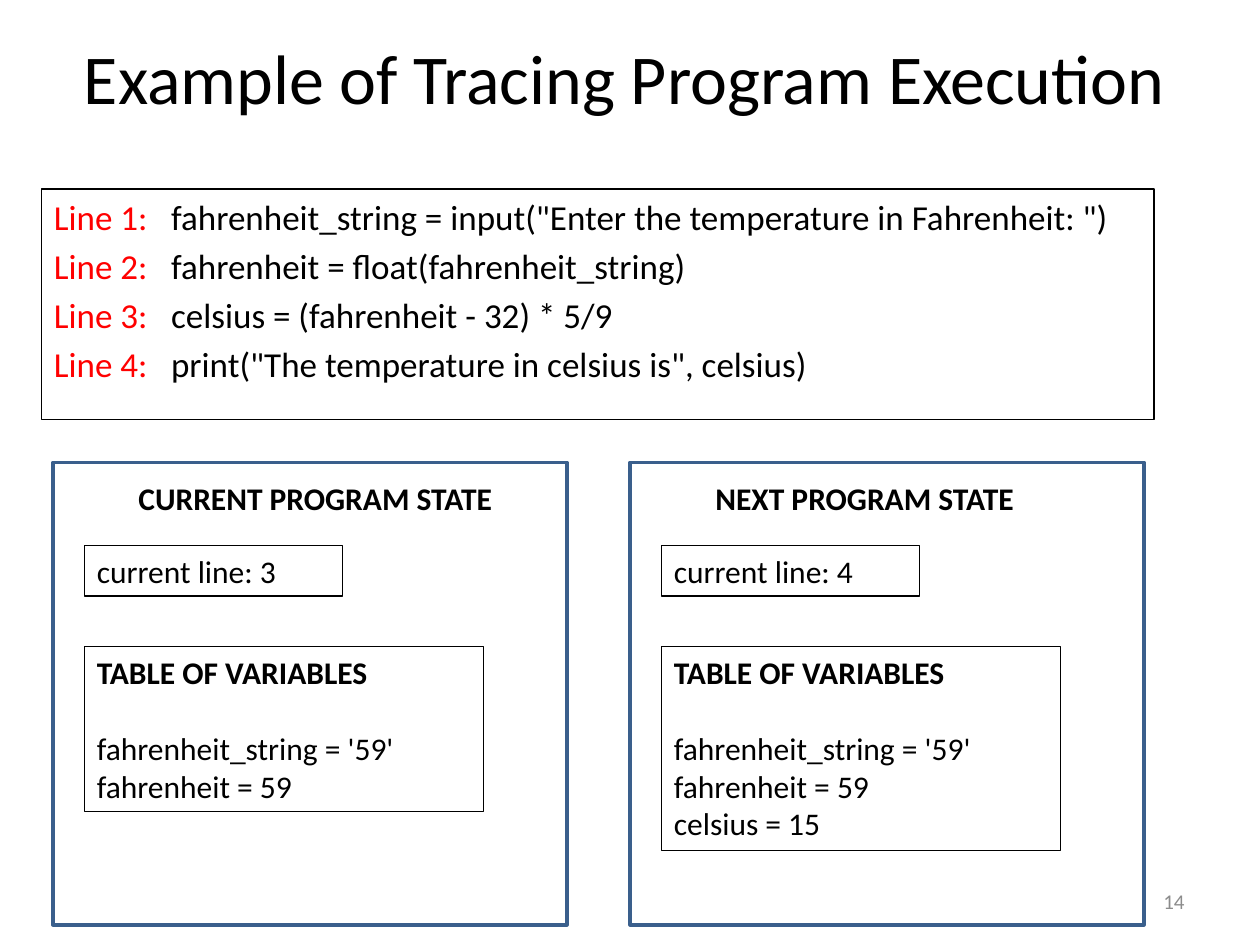
from pptx import Presentation
from pptx.dml.color import RGBColor
from pptx.enum.shapes import MSO_SHAPE as Shape
from pptx.enum.text import MSO_ANCHOR as Anchor, PP_ALIGN as Align
from pptx.util import Inches, Pt


def color(value):
    return RGBColor.from_string(value)


def add_box(shapes, place, lines=(), size=18, ink="000000", border=None, weight=0.75):
    left, top, width, height = map(Inches, place)
    if border:
        box = shapes.add_shape(Shape.RECTANGLE, left, top, width, height)
        box.shadow.inherit = False
        box.fill.background()
        box.line.color.rgb = color(border)
        box.line.width = Pt(weight)
    else:
        box = shapes.add_textbox(left, top, width, height)
    frame = box.text_frame
    frame.word_wrap = True
    frame.vertical_anchor = Anchor.TOP
    for index, line in enumerate(lines):
        paragraph = frame.add_paragraph() if index else frame.paragraphs[0]
        paragraph.text = line
        paragraph.alignment = Align.LEFT
        paragraph.font.name = "Calibri"
        paragraph.font.size = Pt(size)
        paragraph.font.color.rgb = color(ink)
    return frame


prs = Presentation()
prs.slide_width = Inches(10)
prs.slide_height = Inches(7.5)
slide = prs.slides.add_slide(prs.slide_layouts[6])

title = add_box(slide.shapes, (0.08, 0.17, 9.75, 0.88),
                ["Example of Tracing Program Execution"], size=40)
title.vertical_anchor = Anchor.MIDDLE
title.paragraphs[0].alignment = Align.CENTER

page_number = add_box(slide.shapes, (7.17, 6.95, 2.33, 0.4), ["14"], size=12, ink="8C8C8C")
page_number.vertical_anchor = Anchor.MIDDLE
page_number.paragraphs[0].alignment = Align.RIGHT

code_lines = [
    'fahrenheit_string = input("Enter the temperature in Fahrenheit: ")',
    "fahrenheit = float(fahrenheit_string)",
    "celsius = (fahrenheit - 32) * 5/9",
    'print("The temperature in celsius is", celsius)',
]
labels = [f"Line {number}:" for number in range(1, len(code_lines) + 1)]
program = add_box(slide.shapes, (0.33, 1.5, 8.83, 1.83), labels, size=20, border="000000")
code_indent = Inches(0.93)
for paragraph, code in zip(program.paragraphs, code_lines):
    paragraph.space_before = Pt(4)
    properties = paragraph._p.get_or_add_pPr()
    properties.set("marL", str(code_indent))
    properties.set("indent", str(-code_indent))
    paragraph.runs[0].font.color.rgb = color("FF0000")
    paragraph.add_run().text = "\t" + code

states = [
    (0.42, "CURRENT", 3, ["fahrenheit_string = '59'", "fahrenheit = 59"], 1.31),
    (5, "NEXT", 4, ["fahrenheit_string = '59'", "fahrenheit = 59", "celsius = 15"], 1.62),
]
for left, state, line_number, variables, table_height in states:
    panel = slide.shapes.add_group_shape().shapes
    add_box(panel, (left, 3.67, 4.08, 3.67), border="3A5F8C", weight=2)
    table = add_box(panel, (left + 0.25, 5.13, 3.17, table_height),
                    ["TABLE OF VARIABLES", *variables], border="000000")
    table.paragraphs[0].font.bold = True
    table.paragraphs[0].space_after = Pt(22)
    add_box(panel, (left + 0.25, 4.33, 2.05, 0.4),
            [f"current line: {line_number}"], border="000000")
    heading = add_box(panel, (left + 0.58, 3.75, 3.17, 0.4), [f"{state} PROGRAM STATE"])
    heading.paragraphs[0].font.bold = True

prs.save("out.pptx")
